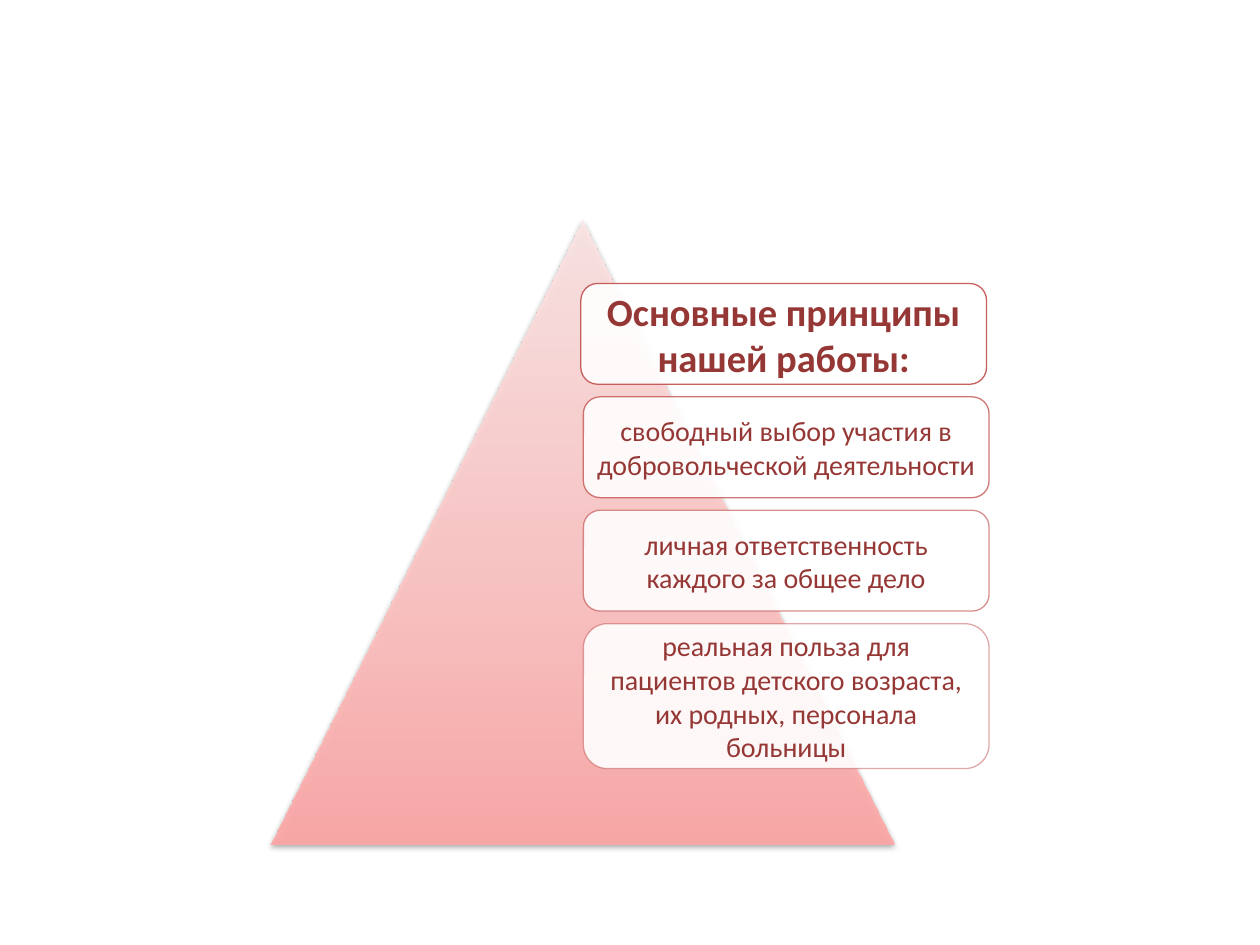
"""Build a slide with a pyramid and a column of principle cards."""
from dataclasses import dataclass

from lxml import etree
from pptx import Presentation
from pptx.dml.color import RGBColor
from pptx.enum.shapes import MSO_SHAPE
from pptx.enum.text import MSO_ANCHOR, PP_ALIGN
from pptx.oxml.ns import qn
from pptx.util import Pt

TRIANGLE = MSO_SHAPE.ISOSCELES_TRIANGLE
ROUNDED = MSO_SHAPE.ROUNDED_RECTANGLE
MIDDLE = MSO_ANCHOR.MIDDLE
CENTER = PP_ALIGN.CENTER
PX = 9144


@dataclass(frozen=True)
class Theme:
    font: str = "Calibri"
    title_size: int = 22
    body_size: int = 16
    text: str = "953735"
    outline: str = "C0504D"
    card: str = "FFFFFF"
    shadow: str = "000000"
    gradient: tuple = ((0, "FFA6A5"), (35, "FFC0BF"), (100, "FFE7E7"))
    opacity: int = 90


def add_alpha(color, percent):
    etree.SubElement(color, qn("a:alpha"), val=str(percent * 1000))


def add_color(parent, value, percent):
    add_alpha(etree.SubElement(parent, qn("a:srgbClr"), val=value), percent)


theme = Theme()
presentation = Presentation()
presentation.slide_width = 1000 * PX
presentation.slide_height = 750 * PX
slide = presentation.slides.add_slide(presentation.slide_layouts[6])

pyramid = slide.shapes.add_shape(TRIANGLE, 215 * PX, 175 * PX, 495 * PX, 495 * PX)
pyramid.line.fill.background()
pyramid.fill.gradient()
pyramid.fill.gradient_angle = 90
properties = pyramid.element.spPr
stops = properties.find(".//" + qn("a:gsLst"))
for stop in list(stops):
    stops.remove(stop)
for position, color in theme.gradient:
    stop = etree.SubElement(stops, qn("a:gs"), pos=str(position * 1000))
    add_color(stop, color, theme.opacity)
pyramid.shadow.inherit = False
shadow = etree.SubElement(
    properties.find(qn("a:effectLst")), qn("a:outerShdw"),
    blurRad="40000", dist="20000", dir="5400000", rotWithShape="0",
)
add_color(shadow, theme.shadow, 38)

cards = (
    ("Основные принципы нашей работы:", 461, 80, 90, 9, theme.title_size, True),
    ("свободный выбор участия в добровольческой деятельности",
     463, 80, 77, 6, theme.body_size, False),
    ("личная ответственность каждого за общее дело",
     463, 80, 63, 6, theme.body_size, False),
    ("реальная польза для пациентов детского возраста, их родных, персонала больницы",
     463, 115, 50, 6, theme.body_size, False),
)
card_width, card_gap, top = 322, 10, 225
for text, left, height, line_opacity, inset, size, bold in cards:
    card = slide.shapes.add_shape(
        ROUNDED, left * PX, top * PX, card_width * PX, height * PX)
    card.shadow.inherit = False
    card.fill.solid()
    card.fill.fore_color.rgb = RGBColor.from_string(theme.card)
    card.line.color.rgb = RGBColor.from_string(theme.outline)
    card.line.width = Pt(0.75)
    fill_color, line_color = card.element.spPr.iter(qn("a:srgbClr"))
    add_alpha(fill_color, theme.opacity)
    add_alpha(line_color, line_opacity)

    frame = card.text_frame
    frame.word_wrap = True
    frame.vertical_anchor = MIDDLE
    frame.margin_left = frame.margin_right = inset * PX
    frame.margin_top = frame.margin_bottom = inset * PX
    paragraph = frame.paragraphs[0]
    paragraph.alignment = CENTER
    run = paragraph.add_run()
    run.text = text
    run.font.name = theme.font
    run.font.size = Pt(size)
    run.font.bold = bold
    run.font.color.rgb = RGBColor.from_string(theme.text)
    top += height + card_gap

presentation.save("out.pptx")
